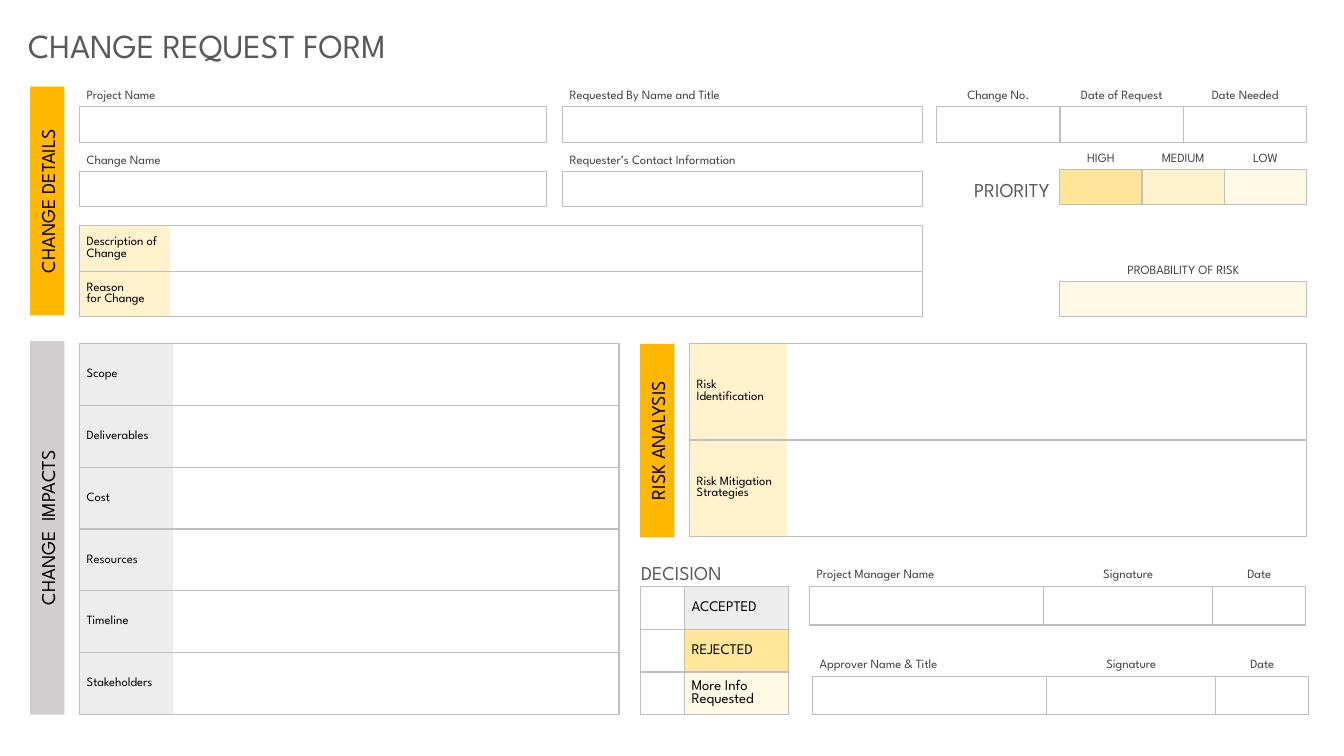
from dataclasses import dataclass
from typing import Any

from lxml import etree
from pptx import Presentation
from pptx import util as u
from pptx.dml import color
from pptx.enum import shapes, text
from pptx.oxml import ns

LEFT, CENTER, RIGHT = text.PP_ALIGN.LEFT, text.PP_ALIGN.CENTER, text.PP_ALIGN.RIGHT
WHITE, LINE, BLACK, LABEL, HEADING = "FFFFFF", "BFBFBF", "000000", "404040", "595959"
AMBER, GOLD, SAND, CREAM = "FFB700", "FFE599", "FFF2CC", "FFF9E5"
GREY, PALE_GREY = "D0CECE", "EDEDED"


def rgb(value):
    return color.RGBColor.from_string(value)


@dataclass
class Cell:
    text: str = ""
    fill: str = WHITE
    sides: str = "LRTB"
    align: Any = LEFT
    size: float = 9
    color: str = BLACK


@dataclass
class Form:
    slide: Any
    font: str = "League Spartan"

    def style(self, frame, size, colour, align=LEFT, spacing=None):
        for paragraph in frame.paragraphs:
            paragraph.alignment = align
            if spacing:
                paragraph.line_spacing = spacing
            paragraph.font.name = self.font
            paragraph.font.size = u.Pt(size)
            paragraph.font.bold = False
            paragraph.font.color.rgb = rgb(colour)

    def title(self, words, left, top, width, height):
        shape = self.slide.shapes.title
        shape.left, shape.top = u.Inches(left), u.Inches(top)
        shape.width, shape.height = u.Inches(width), u.Inches(height)
        frame = shape.text_frame
        frame.text = words
        frame.vertical_anchor = text.MSO_ANCHOR.TOP
        self.style(frame, 24, HEADING)

    def heading(self, words, left, top, align=LEFT):
        shape = self.slide.shapes.add_textbox(
            u.Inches(left), u.Inches(top), u.Inches(1.22), u.Inches(0.35))
        shape.text_frame.word_wrap = True
        shape.text_frame.text = words
        self.style(shape.text_frame, 14, HEADING, align, 1.15)

    def band(self, words, left, top, height, fill, width=0.34):
        """Upright band whose text reads from bottom to top."""
        shift = (height - width) / 2
        shape = self.slide.shapes.add_shape(
            shapes.MSO_SHAPE.RECTANGLE, u.Inches(left - shift), u.Inches(top + shift),
            u.Inches(height), u.Inches(width))
        shape.rotation = 270
        shape.shadow.inherit = False
        shape.fill.solid()
        shape.fill.fore_color.rgb = rgb(fill)
        shape.line.fill.background()
        shape.text_frame.text = words
        shape.text_frame.vertical_anchor = text.MSO_ANCHOR.MIDDLE
        self.style(shape.text_frame, 14, BLACK, CENTER)

    def borders(self, cell, sides):
        properties = cell._tc.get_or_add_tcPr()
        for index, side in enumerate("LRTB"):
            line = etree.Element(ns.qn(f"a:ln{side}"), w=str(u.Pt(1)))
            if side in sides:
                fill = etree.SubElement(line, ns.qn("a:solidFill"))
                etree.SubElement(fill, ns.qn("a:srgbClr"), val=LINE)
            else:
                etree.SubElement(line, ns.qn("a:noFill"))
            properties.insert(index, line)

    def table(self, left, top, widths, heights, rows):
        table = self.slide.shapes.add_table(
            len(heights), len(widths), u.Inches(left), u.Inches(top),
            u.Inches(sum(widths)), u.Inches(sum(heights))).table
        table.first_row = table.horz_banding = False
        for column, width in zip(table.columns, widths):
            column.width = u.Inches(width)
        for row, height, contents in zip(table.rows, heights, rows):
            row.height = u.Inches(height)
            for cell, content in zip(row.cells, contents):
                cell.margin_left = cell.margin_right = u.Inches(0.07)
                cell.margin_top = cell.margin_bottom = 0
                cell.vertical_anchor = text.MSO_ANCHOR.MIDDLE
                cell.text = content.text
                self.style(cell.text_frame, content.size, content.color, content.align)
                cell.fill.solid()
                cell.fill.fore_color.rgb = rgb(content.fill)
                self.borders(cell, content.sides)

    def fields(self, left, top, widths, labels, fills=None, first=CENTER, heights=(0.2, 0.35)):
        """Captions above boxes to fill in."""
        fills = fills or [WHITE] * len(labels)
        captions = [Cell(label, sides="B", align=CENTER if index else first, color=LABEL)
                    for index, label in enumerate(labels)]
        self.table(left, top, widths, heights, [captions, [Cell(fill=fill) for fill in fills]])

    def label_rows(self, left, top, widths, height, labels, fill):
        """Shaded labels beside wide boxes to fill in."""
        rows = [[Cell(label, fill, "LTB"), Cell(sides="RTB")] for label in labels]
        self.table(left, top, widths, [height / len(labels)] * len(labels), rows)


def main():
    presentation = Presentation()
    presentation.slide_width, presentation.slide_height = u.Inches(13.33), u.Inches(7.5)
    form = Form(presentation.slides.add_slide(presentation.slide_layouts[5]))
    form.title("CHANGE REQUEST FORM", 0.18, 0.2, 9.13, 0.5)

    # Change details
    form.band("CHANGE DETAILS", 0.3, 0.86, 2.27, AMBER)
    for top, name, requester in (
            (0.86, "Project Name", "Requested By Name and Title"),
            (1.5, "Change Name", "Requester’s Contact Information")):
        form.fields(0.79, top, [4.63], [name], first=LEFT)
        form.fields(5.58, top, [3.57], [requester], first=LEFT)
    form.fields(9.29, 0.86, [3.67 / 3] * 3, ["Change No.", "Date of Request", "Date Needed"])
    form.label_rows(0.79, 2.24, [0.9, 7.46], 0.9,
                    ["Description of Change", "Reason\nfor Change"], SAND)

    # Priority and probability
    form.heading("PRIORITY", 9.29, 1.68, RIGHT)
    form.fields(10.51, 1.48, [2.45 / 3] * 3, ["HIGH", "MEDIUM", "LOW"], [GOLD, SAND, CREAM])
    form.fields(10.51, 2.59, [2.45], ["PROBABILITY OF RISK"], [CREAM])

    # Change impacts
    form.band("CHANGE  IMPACTS", 0.3, 3.38, 3.71, GREY)
    form.label_rows(0.79, 3.41, [0.93, 4.42], 3.68,
                    ["Scope", "Deliverables", "Cost", "Resources", "Timeline", "Stakeholders"],
                    PALE_GREY)

    # Risk analysis
    form.band("RISK ANALYSIS", 6.35, 3.41, 1.92, AMBER)
    form.label_rows(6.84, 3.41, [0.97, 5.15], 1.91,
                    ["Risk Identification", "Risk Mitigation Strategies"], SAND)

    # Decision
    form.heading("DECISION", 6.26, 5.48)
    outcomes = [("ACCEPTED", PALE_GREY), ("REJECTED", "FFE699"), ("More Info Requested", CREAM)]
    form.table(6.35, 5.82, [0.44, 1.03], [1.27 / 3] * 3,
               [[Cell(), Cell(words, fill, size=10.5)] for words, fill in outcomes])

    # Signatures
    for left, top, signer in ((8.03, 5.6, "Project Manager Name"),
                              (8.06, 6.49, "Approver Name & Title")):
        form.fields(left, top, [2.32, 1.68, 0.92], [signer, "Signature", "Date"],
                    first=LEFT, heights=(0.22, 0.38))

    presentation.save("out.pptx")


if __name__ == "__main__":
    main()
